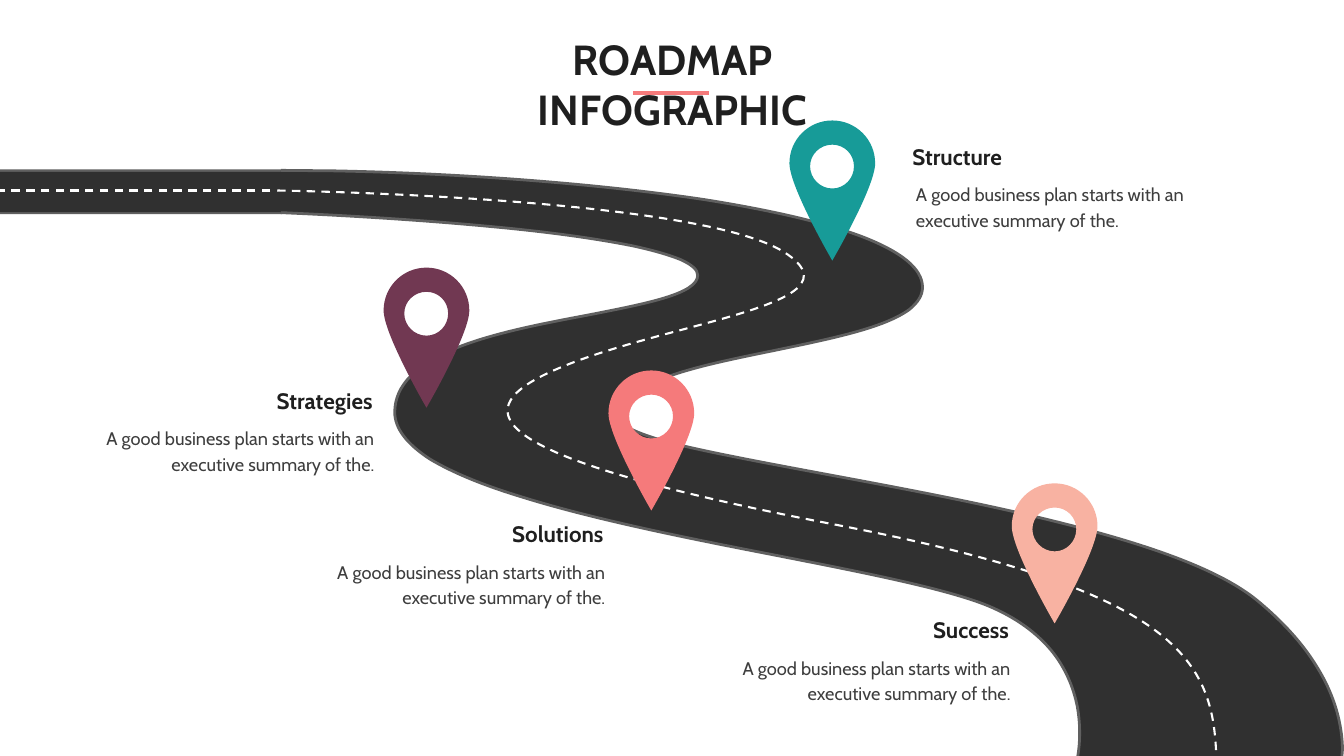
from pptx import Presentation, util as u
from pptx.dml.color import RGBColor
from pptx.enum import dml, shapes, text
from pptx.oxml.ns import qn

C = {"road": "303030", "kerb": "606060", "white": "FFFFFF", "heading": "1F1F1F",
     "body": "3E3E3E", "teal": "179B98", "plum": "713852", "peach": "F8B2A2",
     "coral": "F57A7B"}
FONT = "Cabin"
TITLE = "ROADMAP INFOGRAPHIC"
BODY = "A good business plan starts with an executive summary of the."
LEFT, RIGHT = text.PP_ALIGN.LEFT, text.PP_ALIGN.RIGHT

# heading, colour, pin (left, top), heading (left, top, width), alignment
STOPS = [
    ("Structure", "teal", (15.66, 2.39), (18, 2.78, 2.14), LEFT),
    ("Strategies", "plum", (7.61, 5.31), (5.17, 7.62, 2.32), RIGHT),
    ("Success", "peach", (20.07, 9.59), (18.28, 12.18, 1.83), RIGHT),
    ("Solutions", "coral", (12.07, 7.35), (9.92, 10.27, 2.15), RIGHT),
]

# Paths: a start point, then points (x, y) or cubic curves (x1, y1, x2, y2, x, y)
OUTER_EDGE = [
    (5.57, 3.38), (6.61, 3.39),
    (9.22, 3.44, 11.9, 3.65, 13.97, 3.96), (15.29, 4.17, 16.33, 4.41, 17.06, 4.68),
    (17.88, 4.99, 18.3, 5.33, 18.3, 5.7), (18.3, 5.86, 18.21, 6, 18.04, 6.14),
    (17.89, 6.25, 17.67, 6.36, 17.38, 6.46), (16.84, 6.65, 16.1, 6.8, 15.38, 6.95),
    (13.86, 7.26, 12.29, 7.57, 12.29, 8.29), (12.29, 8.45, 12.68, 8.63, 13.48, 8.83),
    (14.24, 9.01, 15.26, 9.2, 16.44, 9.42), (18, 9.71, 19.77, 10.04, 21.34, 10.45),
    (23.15, 10.92, 24.33, 11.4, 24.97, 11.94), (25.45, 12.34, 25.84, 12.77, 26.11, 13.21),
    (26.33, 13.56, 26.48, 13.92, 26.56, 14.28), (26.61, 14.51, 26.63, 14.71, 26.63, 14.87),
    (26.62, 15),
]
INNER_EDGE = [
    (21.38, 15), (21.42, 14.76, 21.44, 14.41, 21.37, 14.02),
    (21.29, 13.62, 21.13, 13.26, 20.89, 12.95), (20.58, 12.56, 20.15, 12.25, 19.6, 12.02),
    (18.77, 11.68, 17.13, 11.36, 15.4, 11.02), (13.7, 10.69, 11.78, 10.31, 10.32, 9.85),
    (9.53, 9.61, 8.95, 9.36, 8.53, 9.11), (8.07, 8.81, 7.83, 8.5, 7.83, 8.18),
    (7.83, 7.65, 8.25, 7.22, 9.11, 6.88), (9.86, 6.59, 10.82, 6.41, 11.67, 6.25),
    (12.84, 6.02, 13.84, 5.83, 13.84, 5.46), (13.84, 5.35, 13.72, 5.25, 13.5, 5.15),
    (13.28, 5.06, 12.97, 4.97, 12.56, 4.88), (11.86, 4.74, 10.9, 4.6, 9.68, 4.49),
    (7.87, 4.32, 6.05, 4.24, 5.6, 4.22), (5.57, 4.22),
]
CENTRE_LINE = [
    (5.5, 3.78), (5.5, 3.78, 13.81, 3.9, 15.55, 5), (17.28, 6.1, 12.91, 6.4, 10.79, 7.44),
    (9.07, 8.29, 10.2, 9.19, 16.57, 10.41), (23.6, 11.76, 24.13, 13.17, 24.13, 15.29),
]
# Relative to the top left of a pin
PIN_BODY = [
    (0.85, 0), (0.38, 0, 0, 0.38, 0, 0.85), (0, 1.32, 0.85, 2.78, 0.85, 2.78),
    (0.85, 2.78, 1.7, 1.32, 1.7, 0.85), (1.7, 0.38, 1.32, 0, 0.85, 0),
]
PIN_HOLE = [
    (0.85, 1.35), (0.61, 1.35, 0.41, 1.15, 0.41, 0.91), (0.41, 0.67, 0.61, 0.48, 0.85, 0.48),
    (1.09, 0.48, 1.28, 0.67, 1.28, 0.91), (1.28, 1.15, 1.09, 1.35, 0.85, 1.35),
]


def rgb(name):
    return RGBColor.from_string(C[name])


def paint(sp, fill=None, line=None, width=0):
    sp.shadow.inherit = False
    if fill:
        sp.fill.solid()
        sp.fill.fore_color.rgb = rgb(fill)
    else:
        sp.fill.background()
    if line:
        sp.line.color.rgb = rgb(line)
        sp.line.width = u.Pt(width)
    else:
        sp.line.fill.background()
    return sp


def add_outline(s, contours, at=(0, 0), close=True):
    """Build a freeform through the end points, then bend its segments into curves."""
    moved = [[tuple(u.Inches(v + at[i % 2]) for i, v in enumerate(part)) for part in path]
             for path in contours]
    builder = s.shapes.build_freeform(*moved[0][0])
    for i, path in enumerate(moved):
        if i:
            builder.move_to(*path[0])
        builder.add_line_segments([part[-2:] for part in path[1:]], close=close)
    sp = builder.convert_to_shape()
    parts = [part for path in moved for part in path[1:]]
    for segment, part in zip(list(sp._element.iter(qn("a:lnTo"))), parts):
        if len(part) == 6:
            curve = segment.makeelement(qn("a:cubicBezTo"), {})
            for x, y in zip(part[::2], part[1::2]):
                point = {"x": str(x - sp.left), "y": str(y - sp.top)}
                curve.append(curve.makeelement(qn("a:pt"), point))
            segment.getparent().replace(segment, curve)
    return sp


def add_line(s, x1, x2, y, color, width):
    ln = s.shapes.add_connector(shapes.MSO_CONNECTOR.STRAIGHT,
                                *map(u.Inches, (x1, y, x2, y)))
    ln.line.color.rgb = rgb(color)
    ln.line.width = u.Pt(width)
    sp_pr = ln._element.spPr
    sp_pr.append(sp_pr.makeelement(qn("a:effectLst"), {}))
    return ln


def add_text(s, content, box, size, color, align, bold=False, middle=False):
    tf = s.shapes.add_textbox(*map(u.Inches, box)).text_frame
    tf.word_wrap = True
    if middle:
        tf.vertical_anchor = text.MSO_ANCHOR.MIDDLE
    tf.text = content
    p = tf.paragraphs[0]
    p.alignment = align
    font = p.runs[0].font
    font.name, font.size, font.bold = FONT, u.Pt(size), bold
    font.color.rgb = rgb(color)
    return tf


def add_road(s):
    for top, width, height, color in ((3.36, 5.59, 0.89, "kerb"), (3.41, 5.57, 0.8, "road")):
        box = map(u.Inches, (0, top, width, height))
        paint(s.shapes.add_shape(shapes.MSO_SHAPE.RECTANGLE, *box), color)
    paint(add_outline(s, [OUTER_EDGE + INNER_EDGE]), "road")
    for edge in (OUTER_EDGE, INNER_EDGE):
        paint(add_outline(s, [edge], close=False), line="kerb", width=4)
    curve = add_outline(s, [CENTRE_LINE], close=False)
    paint(curve, line="white", width=3)
    straight = add_line(s, 5.36, 0, 3.78, "white", 3)
    for dashed in (curve, straight):
        dashed.line.dash_style = dml.MSO_LINE.DASH


def add_stop(s, name, color, pin, heading, align):
    paint(add_outline(s, [PIN_HOLE, PIN_BODY], pin), color)
    left, top, width = heading
    add_text(s, name, (left, top, width, 0.64), 32, "heading", align, True, True)
    body_width = 6.04
    body_left = left - 0.07 if align == LEFT else left + width + 0.18 - body_width
    tf = add_text(s, BODY, (body_left, top + 0.68, body_width, 1.22), 26, "body", align)
    tf.margin_left = tf.margin_right = u.Inches(0.24)
    tf.margin_top = tf.margin_bottom = u.Inches(0.12)
    tf.paragraphs[0].line_spacing = u.Pt(36)
    tf.paragraphs[0].space_before = u.Pt(5.2)


def main():
    prs = Presentation()
    prs.slide_width, prs.slide_height = u.Inches(26.66), u.Inches(15)
    s = prs.slides.add_slide(prs.slide_layouts[6])
    add_road(s)
    add_text(s, TITLE, (8.66, 0.61, 9.36, 1.11), 60, "heading", text.PP_ALIGN.CENTER, True)
    add_line(s, 12.56, 14.06, 1.85, "coral", 5)
    for stop in STOPS:
        add_stop(s, *stop)
    prs.save("out.pptx")


if __name__ == "__main__":
    main()
